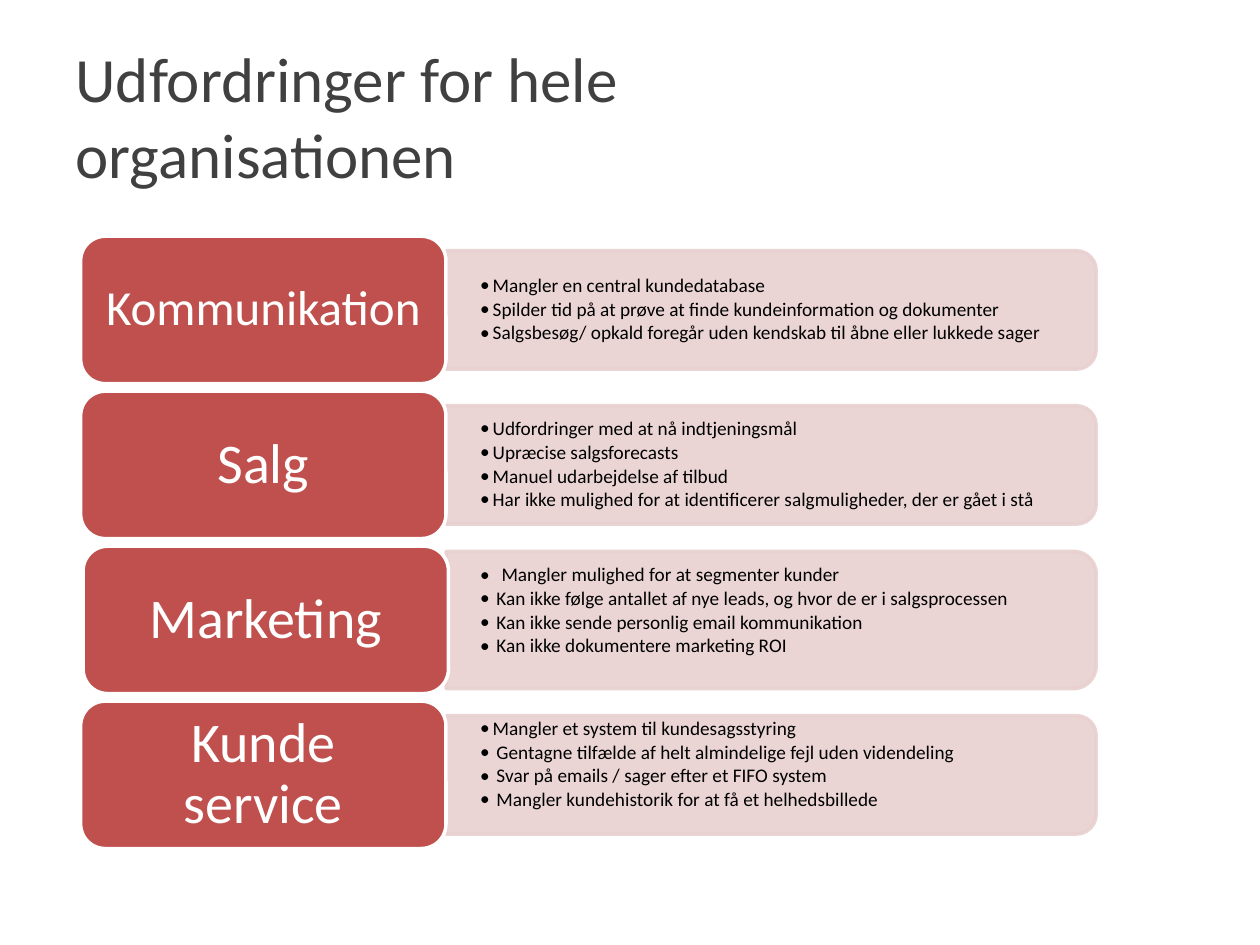
from lxml.etree import SubElement
from pptx import Presentation
from pptx.dml.color import RGBColor
from pptx.enum.shapes import MSO_SHAPE as Shape
from pptx.enum.text import MSO_ANCHOR as Anchor, MSO_AUTO_SIZE as AutoSize, PP_ALIGN as Align
from pptx.oxml.ns import qn
from pptx.util import Inches, Pt

COLORS = {"label": "C0504D", "panel": "E8D0D0", "title": "404040", "ink": "000000", "white": "FFFFFF"}
FONT = "Calibri"
NARROW, MEDIUM, WIDE = 0.1, 0.13, 0.17
FIRST_CENTER, ROW_PITCH = 2.46, 1.23
PANEL_LEFT, PANEL_WIDTH = 3.54, 5.16
LABEL_WIDTH, LABEL_HEIGHT = 2.9, 1.17

TOPICS = [
    dict(name="Kommunikation", size=28, points=[
        ("Mangler en central kundedatabase", NARROW),
        ("Spilder tid på at prøve at finde kundeinformation og dokumenter", NARROW),
        ("Salgsbesøg/ opkald foregår uden kendskab til åbne eller lukkede sager", NARROW)]),
    dict(name="Salg", points=[
        ("Udfordringer med at nå indtjeningsmål", NARROW),
        ("Upræcise salgsforecasts", NARROW),
        ("Manuel udarbejdelse af tilbud", NARROW),
        ("Har ikke mulighed for at identificerer salgmuligheder, der er gået i stå", NARROW)]),
    dict(name="Marketing", left=0.66, height=1.09, lift=0.07, points=[
        ("Mangler mulighed for at segmenter kunder", WIDE),
        ("Kan ikke følge antallet af nye leads, og hvor de er i salgsprocessen", MEDIUM),
        ("Kan ikke sende personlig email kommunikation", MEDIUM),
        ("Kan ikke dokumentere marketing ROI", MEDIUM)]),
    dict(name="Kunde\nservice", lift=0.08, points=[
        ("Mangler et system til kundesagsstyring", NARROW),
        ("Gentagne tilfælde af helt almindelige fejl uden videndeling", MEDIUM),
        ("Svar på emails / sager efter et FIFO system", MEDIUM),
        ("Mangler kundehistorik for at få et helhedsbillede", MEDIUM)]),
]


def write(paragraph, text, size, color, align=Align.LEFT, spacing=0.9, after=0, hang=None):
    """Fill a paragraph with formatted text, bulleted when a hanging indent is given."""
    paragraph.alignment = align
    paragraph.line_spacing = spacing
    paragraph.space_after = Pt(after)
    for index, line in enumerate(text.split("\n")):
        if index:
            paragraph.add_line_break()
        run = paragraph.add_run()
        run.text = line
        run.font.size = Pt(size)
        run.font.name = FONT
        run.font.color.rgb = RGBColor.from_string(COLORS[color])
    if hang:
        properties = paragraph._p.get_or_add_pPr()
        properties.set("marL", str(Inches(hang)))
        properties.set("indent", str(-Inches(hang)))
        SubElement(properties, qn("a:buFont"), typeface=FONT)
        SubElement(properties, qn("a:buChar"), char="•")


class Deck:
    """Holds the presentation style and the current slide."""

    def __init__(self):
        """Open a title-only slide."""
        self.presentation = Presentation()
        self.presentation.slide_width = Inches(10)
        self.presentation.slide_height = Inches(7.5)
        self.slide = self.presentation.slides.add_slide(self.presentation.slide_layouts[5])

    def title(self, text):
        """Place and format the slide title."""
        heading = self.slide.shapes.title
        heading.left, heading.top = Inches(0.5), Inches(0.29)
        heading.width, heading.height = Inches(9), Inches(1.25)
        frame = heading.text_frame
        frame.auto_size = AutoSize.NONE
        frame.vertical_anchor = Anchor.MIDDLE
        write(frame.paragraphs[0], text, 36, "title", spacing=1.0)

    def block(self, kind, left, center, width, height, fill, line):
        """Add a filled shape centred vertically on a row."""
        shape = self.slide.shapes.add_shape(
            kind, Inches(left), Inches(center - height / 2), Inches(width), Inches(height))
        shape.shadow.inherit = False
        shape.fill.solid()
        shape.fill.fore_color.rgb = RGBColor.from_string(COLORS[fill])
        shape.line.color.rgb = RGBColor.from_string(COLORS[line])
        shape.line.width = Pt(2)
        return shape

    def panel(self, center, height):
        """Add a translucent panel rounded on its right side."""
        left = PANEL_LEFT + (PANEL_WIDTH - height) / 2
        panel = self.block(Shape.ROUND_2_SAME_RECTANGLE, left, center, height, PANEL_WIDTH, "panel", "panel")
        panel.rotation = 90
        for color in panel._element.spPr.iter(qn("a:srgbClr")):
            SubElement(color, qn("a:alpha"), val="90000")

    def label(self, name, left, center, size):
        """Add a topic label."""
        label = self.block(Shape.ROUNDED_RECTANGLE, left, center, LABEL_WIDTH, LABEL_HEIGHT, "label", "white")
        frame = label.text_frame
        frame.word_wrap = True
        frame.vertical_anchor = Anchor.MIDDLE
        frame.margin_left = frame.margin_right = Inches(0.05)
        write(frame.paragraphs[0], name, size, "white", align=Align.CENTER)

    def points(self, points, center, height, lift):
        """Add the bulleted points of a topic, raised by the given lift."""
        box = self.slide.shapes.add_textbox(
            Inches(PANEL_LEFT), Inches(center - height / 2), Inches(5.11), Inches(height))
        frame = box.text_frame
        frame.word_wrap = True
        frame.vertical_anchor = Anchor.MIDDLE
        frame.margin_left = frame.margin_right = Inches(0.27)
        frame.margin_top, frame.margin_bottom = 0, Inches(2 * lift)
        for index, (text, hang) in enumerate(points):
            paragraph = frame.add_paragraph() if index else frame.paragraphs[0]
            write(paragraph, text, 11, "ink", after=1.65, hang=hang)

    def topic(self, center, name, points, size=32, left=0.64, height=0.94, lift=0):
        """Add one row: panel, points and label."""
        self.panel(center, height)
        self.points(points, center, height - 0.1, lift)
        self.label(name, left, center, size)


def main():
    """Build and save the slide."""
    deck = Deck()
    deck.title("Udfordringer for hele\norganisationen")
    for row, topic in enumerate(TOPICS):
        deck.topic(FIRST_CENTER + row * ROW_PITCH, **topic)
    deck.presentation.save("out.pptx")


if __name__ == "__main__":
    main()
